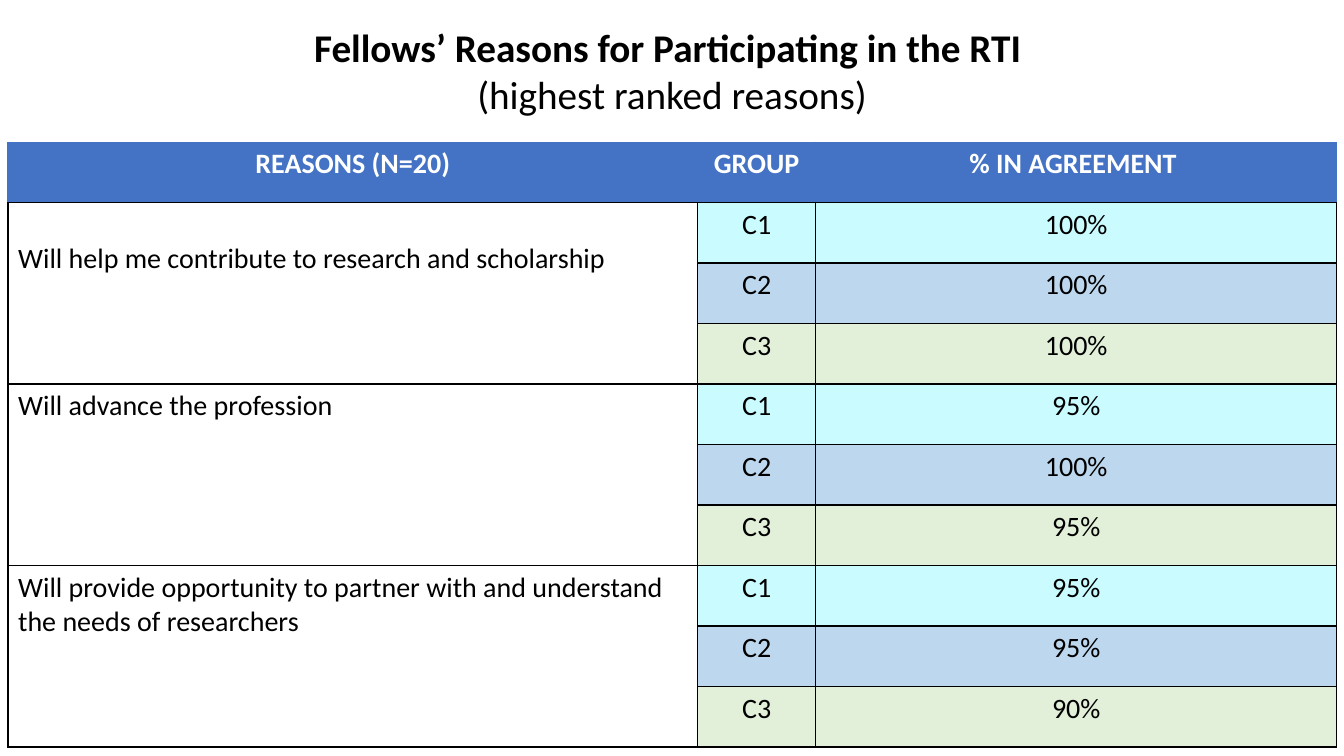
from lxml.etree import SubElement
from pptx import Presentation
from pptx.dml.color import RGBColor
from pptx.enum.text import PP_ALIGN
from pptx.oxml.ns import qn
from pptx.util import Inches, Pt

BLACK, WHITE, BLUE = "000000", "FFFFFF", "4472C4"
GROUP_FILLS = {"C1": "CAFCFF", "C2": "BDD7EE", "C3": "E2F0D9"}
HEADERS = ["REASONS (N=20)", "GROUP", "% IN AGREEMENT "]
COLUMN_WIDTHS = [6.84, 1.17, 5.17]
ROW_HEIGHT = 0.6
REASONS = [
    ("Will help me contribute to research and scholarship", ["100%", "100%", "100%"], 0.39),
    ("Will advance the profession", ["95%", "100%", "95%"], 0.05),
    ("Will provide opportunity to partner with and understand the needs of researchers",
     ["95%", "95%", "90%"], 0.05),
]


def color(value):
    return RGBColor.from_string(value)


class SlideBuilder:
    """Draws text and table elements on one slide in a shared style."""

    def __init__(self, slide, font_name="Calibri"):
        self.slide = slide
        self.font_name = font_name

    def add_text(self, paragraph, text, size, ink=BLACK, bold=False, align=PP_ALIGN.CENTER):
        paragraph.alignment = align
        run = paragraph.add_run()
        run.text = text
        font_format = {"name": self.font_name, "size": Pt(size), "bold": bold}
        for name, value in font_format.items():
            setattr(run.font, name, value)
        run.font.color.rgb = color(ink)

    def title(self, left, top, width, height, lines, margin_top):
        box = self.slide.shapes.add_textbox(
            Inches(left), Inches(top), Inches(width), Inches(height))
        frame = box.text_frame
        frame.word_wrap = True
        frame.margin_top = Inches(margin_top)
        for index, (text, bold) in enumerate(lines):
            paragraph = frame.add_paragraph() if index else frame.paragraphs[0]
            self.add_text(paragraph, text, 28, bold=bold)

    def table(self, left, top, row_count):
        frame = self.slide.shapes.add_table(
            row_count, len(COLUMN_WIDTHS), Inches(left), Inches(top),
            Inches(sum(COLUMN_WIDTHS)), Inches(ROW_HEIGHT * row_count))
        table = frame.table
        table.horz_banding = False
        for column, width in zip(table.columns, COLUMN_WIDTHS):
            column.width = Inches(width)
        for row in table.rows:
            row.height = Inches(ROW_HEIGHT)
        return table

    def borders(self, cell, edge_colors):
        properties = cell._tc.get_or_add_tcPr()
        for edge, ink in zip("LRTB", edge_colors):
            line = SubElement(properties, qn(f"a:ln{edge}"), w=str(Pt(1)))
            fill = SubElement(line, qn("a:solidFill"))
            SubElement(fill, qn("a:srgbClr"), val=ink)

    def cell(self, cell, text, fill, edge_colors=(BLACK,) * 4, margin_top=0.05, **text_format):
        self.borders(cell, edge_colors)
        cell.fill.solid()
        cell.fill.fore_color.rgb = color(fill)
        cell.margin_top = Inches(margin_top)
        if text:
            self.add_text(cell.text_frame.paragraphs[0], text, 20, **text_format)


def main():
    presentation = Presentation()
    presentation.slide_width = Inches(13.33)
    presentation.slide_height = Inches(7.5)
    builder = SlideBuilder(presentation.slides.add_slide(presentation.slide_layouts[6]))

    group_count = len(GROUP_FILLS)
    table = builder.table(0.08, 1.41, 1 + len(REASONS) * group_count)
    for column, header in enumerate(HEADERS):
        builder.cell(table.cell(0, column), header, BLUE, (BLUE, BLUE, BLUE, BLACK),
                     ink=WHITE, bold=True)

    for reason_index, (reason, percentages, margin_top) in enumerate(REASONS):
        first_row = 1 + reason_index * group_count
        table.cell(first_row, 0).merge(table.cell(first_row + group_count - 1, 0))
        for offset, (group, percentage) in enumerate(zip(GROUP_FILLS, percentages)):
            row = first_row + offset
            builder.cell(table.cell(row, 0), "" if offset else reason, WHITE,
                         margin_top=margin_top, align=PP_ALIGN.LEFT)
            for column, text in enumerate([group, percentage], start=1):
                builder.cell(table.cell(row, column), text, GROUP_FILLS[group])

    builder.title(0, -0.29, 13.33, 1.51, [
        ("Fellows’ Reasons for Participating in the RTI ", True),
        ("(highest ranked reasons)", False),
    ], margin_top=0.52)
    presentation.save("out.pptx")


if __name__ == "__main__":
    main()
